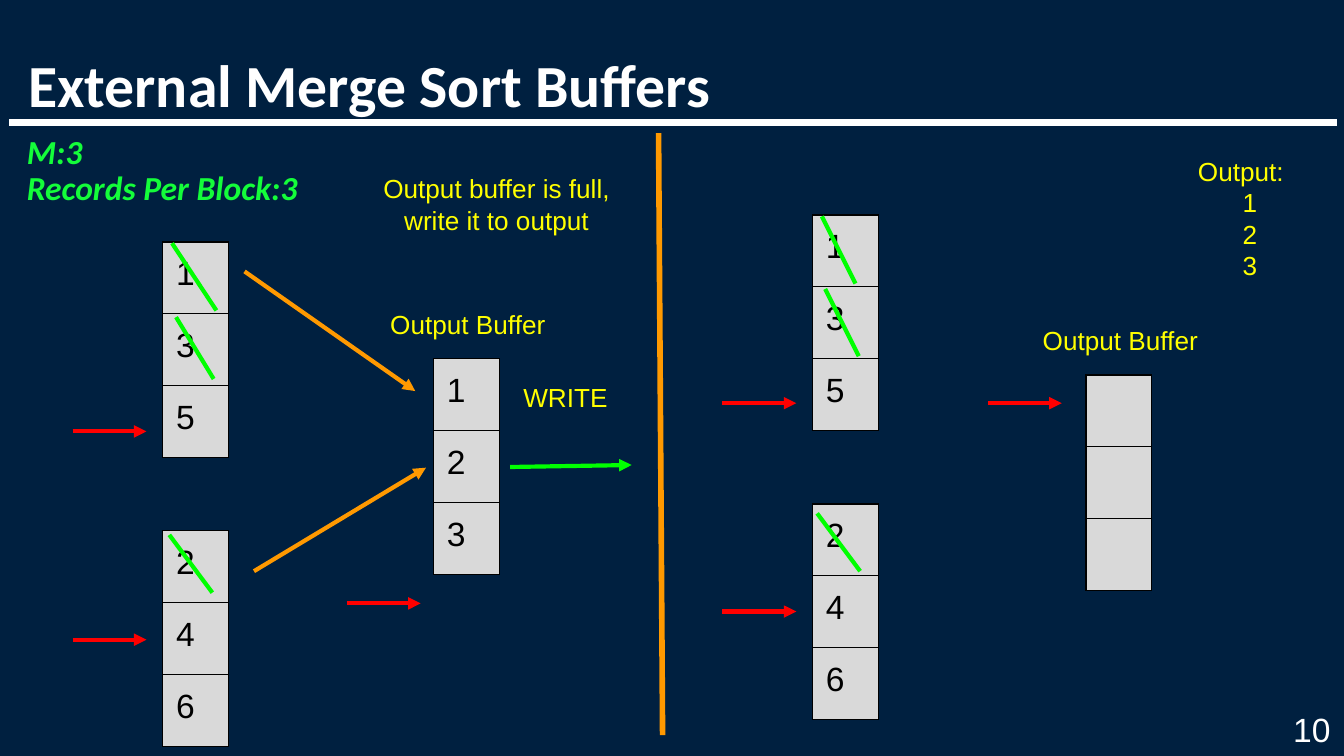
from dataclasses import dataclass

from lxml.etree import SubElement
from pptx import Presentation
from pptx.dml.color import RGBColor
from pptx.enum.shapes import MSO_CONNECTOR
from pptx.enum.text import MSO_ANCHOR, MSO_AUTO_SIZE, PP_ALIGN
from pptx.oxml.ns import qn
from pptx.util import Pt

PX = 4572  # 200 px to the inch
CELL_W, CELL_H = 98, 107
POINTER_LEN = 110


@dataclass(frozen=True)
class Theme:
    background: str = "002040"
    white: str = "FFFFFF"
    black: str = "000000"
    cell: str = "D9D9D9"
    orange: str = "FF9900"
    green: str = "00FF00"
    lime: str = "14FD3A"
    red: str = "FF0000"
    yellow: str = "FFFF00"
    heading_font: str = "Calibri"
    body_font: str = "Arial"
    title_size: int = 32
    text_size: int = 18
    label_size: int = 14


T = Theme()


def px(*values):
    return [value * PX for value in values]


def rgb(color):
    return RGBColor.from_string(color)


def write(tf, text, size=T.label_size, color=T.yellow, font=T.body_font,
          bold=False, italic=False, align=PP_ALIGN.LEFT, spacing=None):
    """Fill a text frame with one paragraph per line of text."""
    for i, line in enumerate(text.split("\n")):
        p = tf.paragraphs[0] if i == 0 else tf.add_paragraph()
        p.alignment = align
        p.line_spacing = spacing
        r = p.add_run()
        r.text = line
        r.font.name, r.font.size = font, Pt(size)
        r.font.bold, r.font.italic = bold, italic
        r.font.color.rgb = rgb(color)


def set_margins(tf, x, y):
    tf.margin_left = tf.margin_right = x * PX
    tf.margin_top = tf.margin_bottom = y * PX


def add_label(s, box, text, margin=20, **style):
    tf = s.shapes.add_textbox(*px(*box)).text_frame
    tf.word_wrap = True
    set_margins(tf, margin, margin)
    write(tf, text, **style)
    return tf


def fill_placeholder(sp, box, text, margin_y, anchor, **style):
    sp.left, sp.top, sp.width, sp.height = px(*box)
    tf = sp.text_frame
    tf.auto_size = MSO_AUTO_SIZE.NONE
    tf.vertical_anchor = anchor
    set_margins(tf, 20, margin_y)
    write(tf, text, font=T.heading_font, bold=True, spacing=0.89, **style)
    return tf


def add_line(s, ends, color, width=2.25, arrow=False):
    sp = s.shapes.add_connector(MSO_CONNECTOR.STRAIGHT, *px(*ends))
    sp.line.color.rgb = rgb(color)
    sp.line.width = Pt(width)
    if arrow:
        ln = sp._element.spPr.find(qn("a:ln"))
        SubElement(ln, qn("a:tailEnd"), type="triangle")
    SubElement(sp._element.spPr, qn("a:effectLst"))


def add_pointer(s, x, y):
    add_line(s, (x, y, x + POINTER_LEN, y), T.red, arrow=True)


def add_borders(cell):
    tc_pr = cell._tc.get_or_add_tcPr()
    for side in ("lnL", "lnR", "lnT", "lnB"):
        ln = SubElement(tc_pr, qn(f"a:{side}"), w=str(Pt(0.75)))
        fill = SubElement(ln, qn("a:solidFill"))
        SubElement(fill, qn("a:srgbClr"), val=T.black)


def add_buffer(s, x, y, values):
    """Draw a one-column block of records."""
    n = len(values)
    table = s.shapes.add_table(n, 1, *px(x, y, CELL_W, n * CELL_H)).table
    table.first_row = table.horz_banding = False
    for i, value in enumerate(values):
        cell = table.cell(i, 0)
        set_margins(cell, 20, 20)
        add_borders(cell)
        cell.fill.solid()
        cell.fill.fore_color.rgb = rgb(T.cell)
        if value:
            write(cell.text_frame, value, size=T.text_size, color=T.black)


def add_input(s, x, y, values, pointer_y, strikes):
    """Draw an input block, its pointer and its strikes, all relative to x, y."""
    add_buffer(s, x, y, values)
    for x1, y1, x2, y2 in strikes:
        add_line(s, (x + x1, y + y1, x + x2, y + y2), T.green)
    add_pointer(s, x - 134, y + pointer_y)


def add_output(s, x, y, values):
    add_buffer(s, x, y, values)
    add_label(s, (x - 84, y - 95, 332, 80), "Output Buffer")


def add_headings(s):
    fill_placeholder(s.shapes.title, (22, 0, 1966, 179), "External Merge Sort Buffers",
                     0, MSO_ANCHOR.BOTTOM, size=T.title_size, color=T.white)
    tf = fill_placeholder(s.placeholders[1], (0, 192, 562, 130),
                          "M:3\nRecords Per Block:3", 10, MSO_ANCHOR.TOP,
                          size=T.text_size, color=T.lime, italic=True)
    for p in tf.paragraphs:
        p.space_before = Pt(0)
        p_pr = p._p.get_or_add_pPr()
        p_pr.set("marL", str(20 * PX))
        p_pr.set("indent", "0")
        SubElement(p_pr, qn("a:buNone"))
    add_line(s, (14, 182, 1990, 182), T.white, 3.75)
    add_label(s, (1914, 1055, 66, 42), "10", margin=0, size=T.text_size,
              color=T.white, align=PP_ALIGN.RIGHT)


def add_before_write(s):
    add_input(s, 242, 360, "135", 282, [(14, 2, 80, 102), (20, 112, 76, 204)])
    add_input(s, 242, 790, "246", 162, [(10, 6, 74, 92)])
    add_output(s, 645, 534, "123")
    add_pointer(s, 516, 898)
    add_line(s, (364, 404, 618, 582), T.orange, arrow=True)
    add_line(s, (378, 850, 634, 696), T.orange, arrow=True)
    add_line(s, (759, 695, 940, 692), T.green, arrow=True)
    add_label(s, (759, 548, 170, 118), "WRITE")
    add_label(s, (538, 237, 402, 144), "Output buffer is full, write it to output",
              align=PP_ALIGN.CENTER)


def add_after_write(s):
    add_input(s, 1209, 320, "135", 280, [(14, 2, 64, 102), (19, 110, 69, 210)])
    add_input(s, 1209, 750, "246", 160, [(7, 14, 71, 100)])
    add_output(s, 1616, 558, ["", "", ""])
    add_pointer(s, 1470, 600)
    tf = add_label(s, (1763, 211, 194, 220), "Output:\n1\n2\n3", align=PP_ALIGN.CENTER)
    tf.paragraphs[0].alignment = PP_ALIGN.LEFT


def main():
    prs = Presentation()
    prs.slide_width, prs.slide_height = px(2000, 1125)
    s = prs.slides.add_slide(prs.slide_layouts[1])
    s.background.fill.solid()
    s.background.fill.fore_color.rgb = rgb(T.background)
    add_headings(s)
    add_line(s, (980, 198, 986, 1094), T.orange, 3)
    add_before_write(s)
    add_after_write(s)
    prs.save("out.pptx")


if __name__ == "__main__":
    main()
